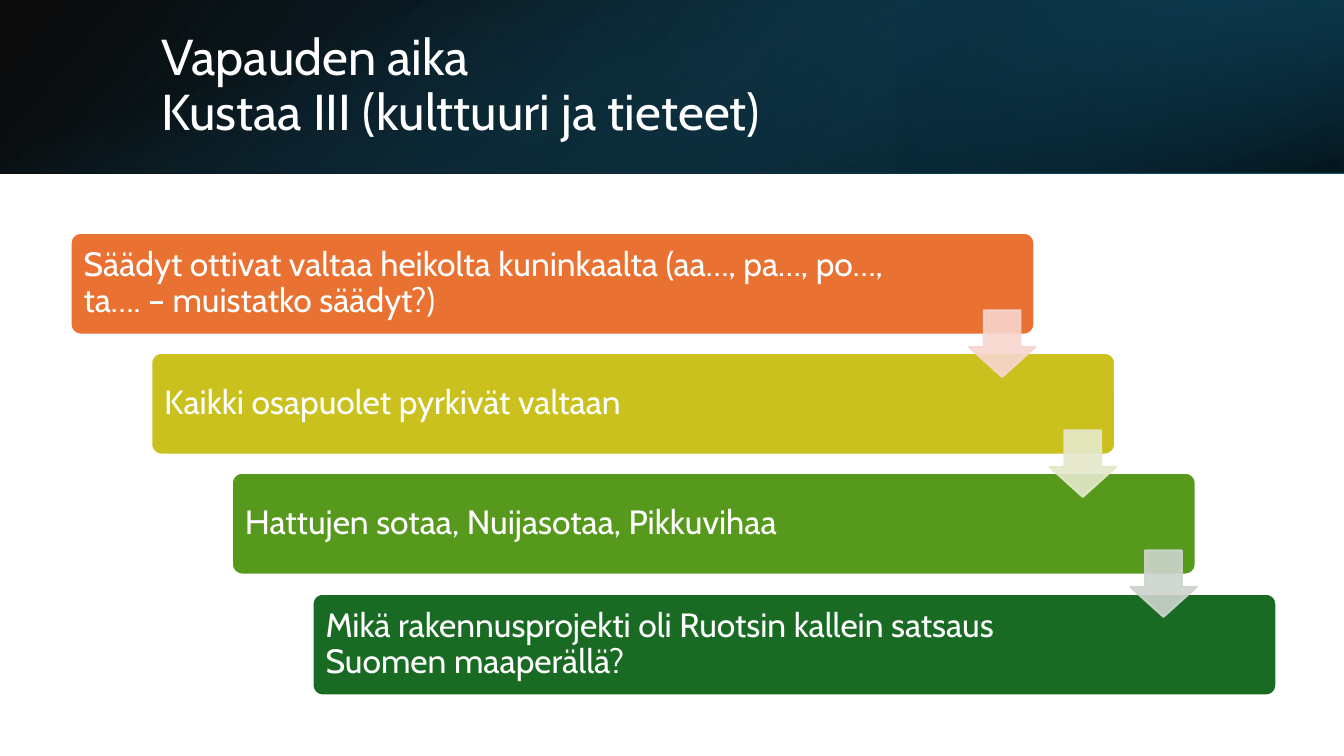
from lxml import etree
from pptx import Presentation
from pptx import util as u
from pptx.dml.color import RGBColor
from pptx.enum import shapes, text
from pptx.oxml import ns

PX = 9144  # 100 px to the inch
W, H, BAND_H = 1333, 750, 172


def add_shape(parent, kind, at, fill, line=None, alpha=100, angle=0):
    """Fill is a hex colour, or a list of (position, hex, alpha) stops."""
    sp = parent.add_shape(kind, *[v * PX for v in at])
    sp.shadow.inherit = False
    spPr = sp.element.spPr
    if isinstance(fill, str):
        sp.fill.solid()
        sp.fill.fore_color.rgb = RGBColor.from_string(fill)
    else:
        grad = etree.Element(ns.qn("a:gradFill"), rotWithShape="1")
        stops = etree.SubElement(grad, ns.qn("a:gsLst"))
        for pos, color, opacity in fill:
            gs = etree.SubElement(stops, ns.qn("a:gs"), pos=str(pos * 1000))
            clr = etree.SubElement(gs, ns.qn("a:srgbClr"), val=color)
            etree.SubElement(clr, ns.qn("a:alpha"), val=str(opacity * 1000))
        etree.SubElement(grad, ns.qn("a:lin"), ang=str(angle * 60000), scaled="0")
        spPr.find(ns.qn("a:prstGeom")).addnext(grad)
    if line:
        sp.line.color.rgb = RGBColor.from_string(line)
        sp.line.width = u.Pt(1.5)
    else:
        sp.line.fill.background()
    if alpha < 100:
        for clr in spPr.iter(ns.qn("a:srgbClr")):
            etree.SubElement(clr, ns.qn("a:alpha"), val=str(alpha * 1000))
    return sp


def add_text(parent, at, words, size, color="FFFFFF", font="Cabin", inset=(10, 10)):
    tf = parent.add_textbox(*[v * PX for v in at]).text_frame
    tf.word_wrap = True
    tf.vertical_anchor = text.MSO_ANCHOR.MIDDLE
    tf.margin_left = tf.margin_right = inset[0] * PX
    tf.margin_top = tf.margin_bottom = inset[1] * PX
    p = tf.paragraphs[0]
    p.text = words
    p.line_spacing = 0.9
    for r in p.runs:
        r.font.size = u.Pt(size)
        r.font.name = font
        r.font.color.rgb = RGBColor.from_string(color)


prs = Presentation()
prs.slide_width, prs.slide_height = W * PX, H * PX
s = prs.slides.add_slide(prs.slide_layouts[6])

# Header band: three layered gradients
bands = [
    ((0, 0, W, BAND_H), 0, True, 140,
     [(0, "000000", 96), (100, "104862", 100)]),
    ((889, 0, 444, BAND_H), 180, True, 320,
     [(19, "0B3041", 68), (100, "156082", 79)]),
    (((W - BAND_H) // 2, (BAND_H - W) // 2, BAND_H, W), 90, False, 340,
     [(23, "156082", 0), (99, "000000", 74)]),
]
for at, rotation, flipped, angle, stops in bands:
    band = add_shape(s.shapes, shapes.MSO_SHAPE.RECTANGLE, at, stops, angle=angle)
    band.rotation = rotation
    if flipped:
        band.element.spPr.find(ns.qn("a:xfrm")).set("flipH", "1")

# Title
add_text(s.shapes, (150, 38, 1098, 96),
         "Vapauden aika\vKustaa III (kulttuuri ja tieteet)", 36, inset=(10, 5))

# Staircase of steps: each one further right and down
steps = [
    ("Säädyt ottivat valtaa heikolta kuninkaalta (aa…, pa…, po…, ta…. – muistatko säädyt?)",
     "E97132", 839),
    ("Kaikki osapuolet pyrkivät valtaan", "CBC11E", 805),
    ("Hattujen sotaa, Nuijasotaa, Pikkuvihaa", "56991D", 805),
    ("Mikä rakennusprojekti oli Ruotsin kallein satsaus Suomen maaperällä?",
     "196B24", 805),
]
corners = [(70 + 80 * i, 231 + 358 * i // 3) for i in range(len(steps))]
stairs = s.shapes.add_group_shape().shapes
for (x, y), (words, color, text_w) in zip(corners, steps):
    box = add_shape(stairs, shapes.MSO_SHAPE.ROUNDED_RECTANGLE,
                    (x, y, 956, 101), color, line="FFFFFF")
    box.adjustments[0] = 0.1
    add_text(stairs, (x + 3, y + 3, text_w, 95), words, 24)

# Arrows from each step to the next
for (x, y), color in zip(corners, ["F7D5CE", "E5E8CA", "CCD4CD"]):
    arrow = add_shape(stairs, shapes.MSO_SHAPE.DOWN_ARROW,
                      (x + 891, y + 77, 66, 66), color, line=color, alpha=90)
    arrow.adjustments[0], arrow.adjustments[1] = 0.55, 0.45

prs.save("out.pptx")
